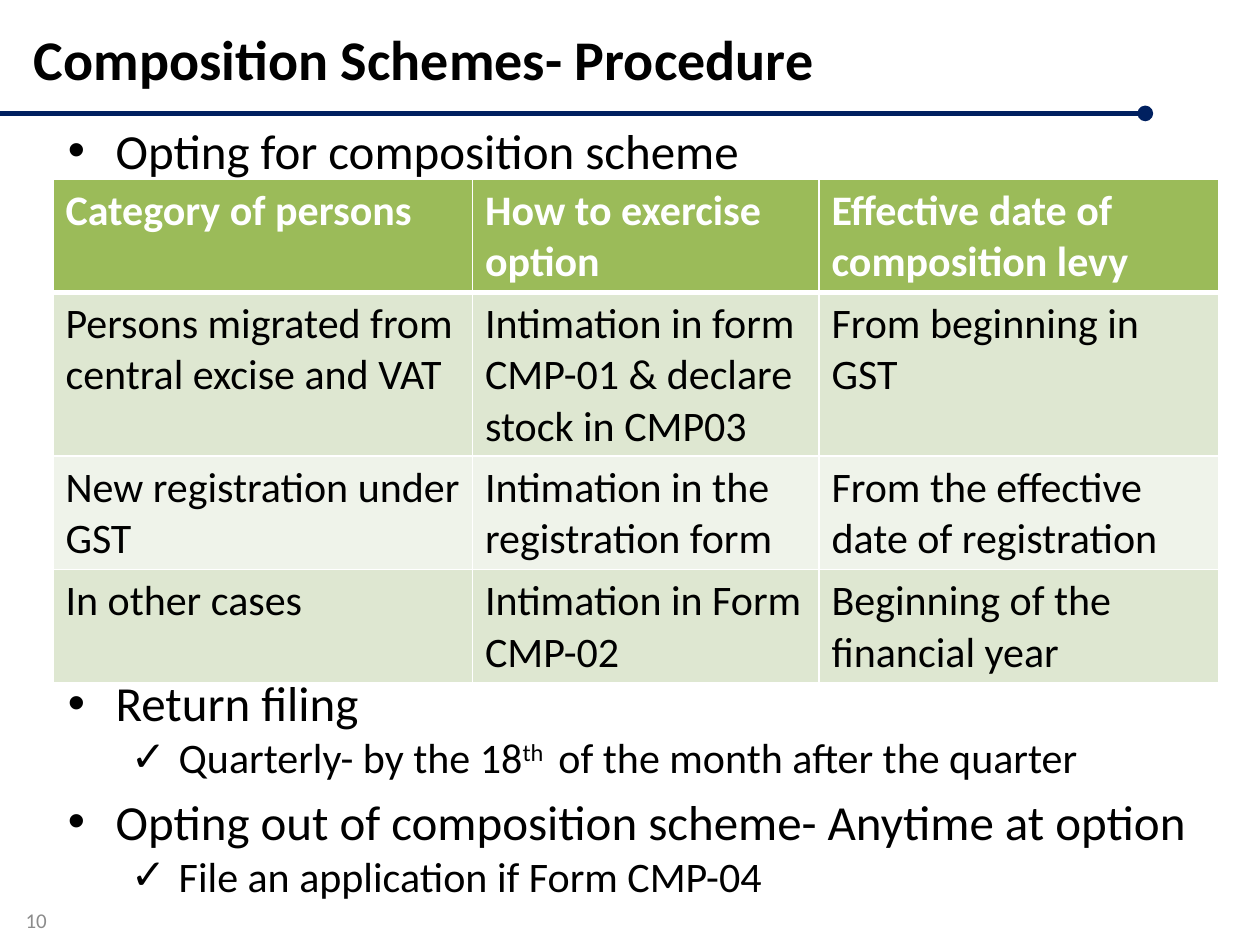
from dataclasses import dataclass

from lxml.etree import SubElement
from pptx import Presentation
from pptx.dml.color import RGBColor
from pptx.enum.shapes import MSO_CONNECTOR
from pptx.enum.text import MSO_ANCHOR, PP_ALIGN
from pptx.oxml.ns import qn
from pptx.util import Inches, Pt


@dataclass(frozen=True)
class Theme:
    font: str = "Calibri"
    ink: str = "000000"
    paper: str = "FFFFFF"
    rule: str = "002060"
    header: str = "9BBB59"
    bands: tuple = ("DEE7D1", "EFF3EA")
    muted: str = "8C8C8C"
    title_size: int = 32
    level_sizes: tuple = (28, 24)
    table_size: int = 24
    number_size: int = 12


THEME = Theme()
WIDTH, HEIGHT = 10, 7.5

TITLE = "Composition Schemes- Procedure"
PAGE_NUMBER = "10"
ROWS = [
    ("Category of persons", "How to exercise option", "Effective date of composition levy"),
    ("Persons migrated from central excise and VAT",
     "Intimation in form CMP-01 & declare stock in CMP03", "From beginning in GST"),
    ("New registration under GST", "Intimation in the registration form",
     "From the effective date of registration"),
    ("In other cases", "Intimation in Form CMP-02", "Beginning of the financial year"),
]
# Each section: top, height, line spacing, items as (level, runs); a run is (text, raised).
SECTIONS = [
    (0.67, 0.81, 1.5, [(0, [("Opting for composition scheme", False)])]),
    (5.29, 0.98, None, [
        (0, [("Return filing", False)]),
        (1, [("Quarterly- by the 18", False), ("th ", True),
             (" of the month after the quarter", False)]),
    ]),
    (6.23, 0.98, None, [
        (0, [("Opting out of composition scheme- Anytime at option", False)]),
        (1, [("File an application if Form CMP-04", False)]),
    ]),
]
BULLETS = ("•", "✓")
INDENTS, HANGING = (0.82, 1.32), 0.38
SECTION_WIDTH = 0.975 * WIDTH
TABLE_LEFT, TABLE_TOP = 0.42, 1.42
COLUMN_WIDTHS = (3.33, 2.75, 3.17)
ROW_HEIGHTS = (0.9, 1.3, 0.9, 0.9)


def style(paragraph, size, color, bold=False):
    font = paragraph.font
    font.name, font.size, font.bold = THEME.font, Pt(size), bold
    font.color.rgb = RGBColor.from_string(color)


def add_text_box(slide, left, top, width, height):
    box = slide.shapes.add_textbox(*map(Inches, (left, top, width, height)))
    box.text_frame.word_wrap = True
    return box.text_frame


def add_bullet(paragraph, level):
    properties = paragraph._p.get_or_add_pPr()
    properties.set("marL", str(Inches(INDENTS[level])))
    properties.set("indent", str(-Inches(HANGING)))
    SubElement(properties, qn("a:buFont"), typeface="Arial")
    SubElement(properties, qn("a:buChar"), char=BULLETS[level])


def add_section(slide, top, height, spacing, items):
    frame = add_text_box(slide, 0, top, SECTION_WIDTH, height)
    for index, (level, runs) in enumerate(items):
        paragraph = frame.add_paragraph() if index else frame.paragraphs[0]
        add_bullet(paragraph, level)
        paragraph.level = level
        paragraph.alignment = PP_ALIGN.JUSTIFY
        paragraph.line_spacing = spacing
        style(paragraph, THEME.level_sizes[level], THEME.ink)
        for text, raised in runs:
            run = paragraph.add_run()
            run.text = text
            if raised:
                run._r.get_or_add_rPr().set("baseline", "30000")


def add_borders(cell, widths):
    """Draw the left, right, top and bottom borders; they must precede the fill."""
    properties = cell._tc.get_or_add_tcPr()
    for side, width in zip("LRTB", widths):
        line = SubElement(properties, qn(f"a:ln{side}"), w=str(Pt(width)))
        fill = SubElement(line, qn("a:solidFill"))
        SubElement(fill, qn("a:srgbClr"), val=THEME.paper)


def add_options_table(slide):
    table = slide.shapes.add_table(
        len(ROWS), len(COLUMN_WIDTHS), Inches(TABLE_LEFT), Inches(TABLE_TOP),
        Inches(sum(COLUMN_WIDTHS)), Inches(sum(ROW_HEIGHTS))).table
    for column, width in zip(table.columns, COLUMN_WIDTHS):
        column.width = Inches(width)
    for row_index, (row, texts) in enumerate(zip(table.rows, ROWS)):
        row.height = Inches(ROW_HEIGHTS[row_index])
        is_header = row_index == 0
        fill = THEME.header if is_header else THEME.bands[(row_index - 1) % 2]
        top, bottom = 3 if row_index == 1 else 1, 3 if is_header else 1
        for cell, text in zip(row.cells, texts):
            add_borders(cell, (1, 1, top, bottom))
            cell.fill.solid()
            cell.fill.fore_color.rgb = RGBColor.from_string(fill)
            cell.text = text
            style(cell.text_frame.paragraphs[0], THEME.table_size,
                  THEME.paper if is_header else THEME.ink, is_header)


def add_title_rule(slide):
    line = slide.shapes.add_connector(
        MSO_CONNECTOR.STRAIGHT, 0, Inches(0.9), Inches(9.09), Inches(0.9))
    line.line.color.rgb = RGBColor.from_string(THEME.rule)
    line.line.width = Pt(3)
    SubElement(line.line._get_or_add_ln(), qn("a:tailEnd"), type="oval")
    SubElement(line._element.spPr, qn("a:effectLst"))


def add_label(slide, text, place, size, color, bold=False, align=PP_ALIGN.LEFT):
    frame = add_text_box(slide, *place)
    frame.vertical_anchor = MSO_ANCHOR.MIDDLE
    paragraph = frame.paragraphs[0]
    paragraph.text = text
    paragraph.alignment = align
    style(paragraph, size, color, bold)


def main():
    presentation = Presentation()
    presentation.slide_width, presentation.slide_height = Inches(WIDTH), Inches(HEIGHT)
    slide = presentation.slides.add_slide(presentation.slide_layouts[6])
    add_title_rule(slide)
    add_label(slide, TITLE, (0.17, 0.14, 8.31, 0.64), THEME.title_size, THEME.ink, bold=True)
    opening, *closing = SECTIONS
    add_section(slide, *opening)
    add_options_table(slide)
    for section in closing:
        add_section(slide, *section)
    add_label(slide, PAGE_NUMBER, (0, 7.1, 0.47, 0.4), THEME.number_size, THEME.muted,
              align=PP_ALIGN.RIGHT)
    presentation.save("out.pptx")


if __name__ == "__main__":
    main()
